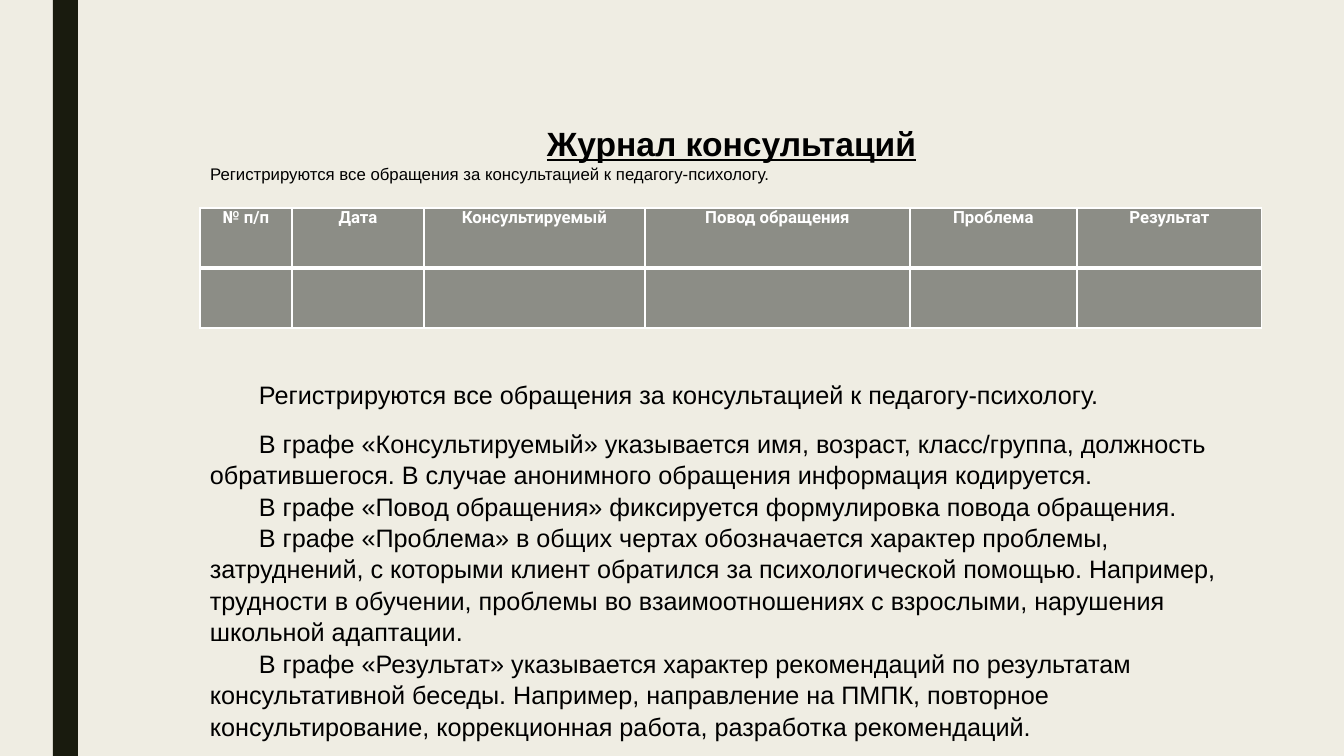
from lxml import etree
from pptx import Presentation
from pptx import util as u
from pptx.dml.color import RGBColor
from pptx.enum import shapes, text
from pptx.oxml import ns

SCALE = 914400 / 100.8
COLORS = {"background": "EFEDE3", "bar": "191B0E", "cell": "8C8D86",
          "white": "FFFFFF", "black": "000000"}
FIRST_LINE_INDENT = 49

COLUMNS = [("№ п/п", 92), ("Дата", 132), ("Консультируемый", 221),
           ("Повод обращения", 265), ("Проблема", 167), ("Результат", 185)]
SUBTITLE = "Регистрируются все обращения за консультацией к педагогу-психологу."
EXPLANATIONS = [
    SUBTITLE,
    "В графе «Консультируемый» указывается имя, возраст, класс/группа, должность "
    "обратившегося. В случае анонимного обращения информация кодируется.",
    "В графе «Повод обращения» фиксируется формулировка повода обращения.",
    "В графе «Проблема» в общих чертах обозначается характер проблемы, затруднений, "
    "с которыми клиент обратился за психологической помощью. Например, трудности "
    "в обучении, проблемы во взаимоотношениях с взрослыми, нарушения школьной адаптации.",
    "В графе «Результат» указывается характер рекомендаций по результатам "
    "консультативной беседы. Например, направление на ПМПК, повторное "
    "консультирование, коррекционная работа, разработка рекомендаций.",
]


def px(length):
    return u.Emu(round(length * SCALE))


def rgb(name):
    return RGBColor.from_string(COLORS[name])


class SlideBuilder:
    def __init__(self, presentation):
        self.slide = presentation.slides.add_slide(presentation.slide_layouts[5])
        fill = self.slide.background.fill
        fill.solid()
        fill.fore_color.rgb = rgb("background")

    def style(self, paragraph, size, color="black", font="Arial", bold=False,
              underline=False, align=text.PP_ALIGN.LEFT, indent=0, spacing=1.0):
        paragraph.alignment = align
        paragraph.line_spacing = spacing
        paragraph.space_before = paragraph.space_after = u.Pt(0)
        paragraph.font.name = font
        paragraph.font.size = u.Pt(size)
        paragraph.font.bold = bold
        paragraph.font.underline = underline
        paragraph.font.color.rgb = rgb(color)
        properties = paragraph._p.get_or_add_pPr()
        properties.set("marL", "0")
        properties.set("indent", str(px(indent)))

    def bar(self, left, top, width, height):
        shape = self.slide.shapes.add_shape(
            shapes.MSO_SHAPE.RECTANGLE, px(left), px(top), px(width), px(height))
        shape.shadow.inherit = False
        shape.fill.solid()
        shape.fill.fore_color.rgb = rgb("bar")
        shape.line.fill.background()

    def title(self, heading, subtitle, left, top, width, height):
        shape = self.slide.shapes.title
        shape.left, shape.top = px(left), px(top)
        shape.width, shape.height = px(width), px(height)
        frame = shape.text_frame
        frame.word_wrap = True
        frame.auto_size = text.MSO_AUTO_SIZE.NONE
        frame.vertical_anchor = text.MSO_ANCHOR.TOP
        frame.margin_top = px(8)
        frame.text = f"{heading}\n{subtitle}"
        first, second = frame.paragraphs
        self.style(first, 24, bold=True, underline=True,
                   align=text.PP_ALIGN.CENTER, indent=FIRST_LINE_INDENT)
        self.style(second, 12, indent=FIRST_LINE_INDENT)

    def body(self, lines, left, top, width, height):
        frame = self.slide.shapes.add_textbox(
            px(left), px(top), px(width), px(height)).text_frame
        frame.word_wrap = True
        frame.text = "\n".join(lines)
        for paragraph in frame.paragraphs:
            self.style(paragraph, 18, indent=FIRST_LINE_INDENT, spacing=1.04)
        frame.paragraphs[0].space_after = u.Pt(12.5)

    def borders(self, cell, widths):
        """Draw white borders; widths gives points for left, right, top, bottom."""
        properties = cell._tc.get_or_add_tcPr()
        for index, (side, width) in enumerate(zip("LRTB", widths)):
            line = etree.Element(ns.qn(f"a:ln{side}"), w=str(u.Pt(width)))
            fill = etree.SubElement(line, ns.qn("a:solidFill"))
            etree.SubElement(fill, ns.qn("a:srgbClr"), val=COLORS["white"])
            properties.insert(index, line)

    def table(self, columns, left, top, row_height):
        width = sum(column_width for _, column_width in columns)
        table = self.slide.shapes.add_table(
            2, len(columns), px(left), px(top), px(width), px(2 * row_height)).table
        for index, (heading, column_width) in enumerate(columns):
            table.columns[index].width = px(column_width)
            table.cell(0, index).text = heading
            for row in range(2):
                cell = table.cell(row, index)
                cell.margin_left = cell.margin_right = px(7)
                cell.margin_top = cell.margin_bottom = 0
                cell.fill.solid()
                cell.fill.fore_color.rgb = rgb("cell")
                self.style(cell.text_frame.paragraphs[0], 12, "white", "Roboto",
                           bold=True, align=text.PP_ALIGN.CENTER)
                self.borders(cell, (1, 1, 1, 3) if row == 0 else (1, 1, 3, 1))


def main():
    presentation = Presentation()
    presentation.slide_width, presentation.slide_height = px(1344), px(756)
    builder = SlideBuilder(presentation)
    builder.bar(53, 0, 25, 756)
    builder.title("Журнал консультаций", SUBTITLE, 151, 115, 1112, 85)
    builder.table(COLUMNS, 200, 208, 60)
    builder.body(EXPLANATIONS, 200, 373, 1062, 364)
    presentation.save("out.pptx")


if __name__ == "__main__":
    main()
